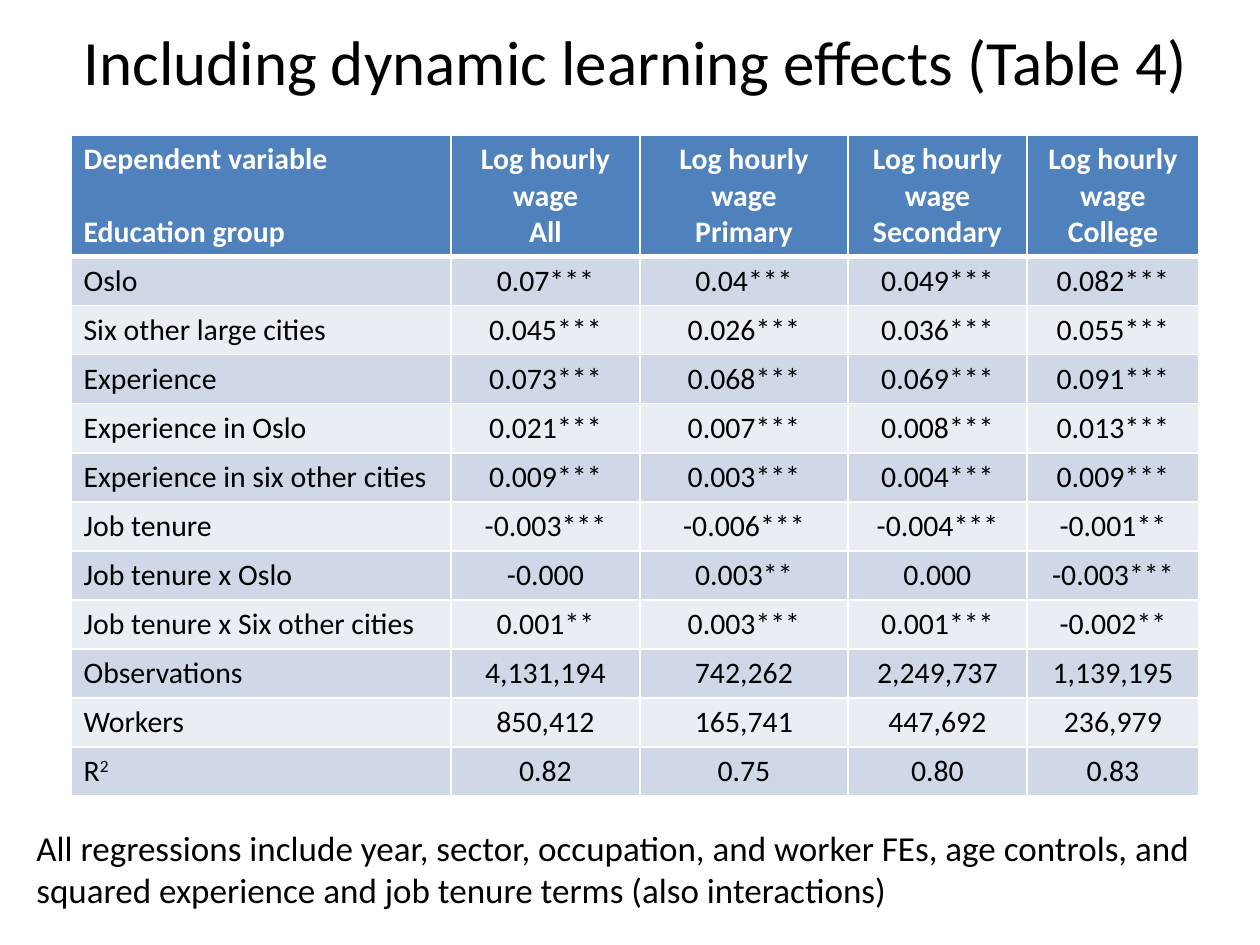
from lxml.etree import SubElement
from pptx import Presentation
from pptx.dml.color import RGBColor
from pptx.enum.text import MSO_AUTO_SIZE, PP_ALIGN as AL
from pptx.oxml.ns import qn
from pptx.util import Emu, Pt

BLACK = RGBColor(0x00, 0x00, 0x00)
WHITE = RGBColor(0xFF, 0xFF, 0xFF)
HEADER = RGBColor(0x4F, 0x81, 0xBD)
BANDS = (RGBColor(0xE9, 0xED, 0xF4), RGBColor(0xD0, 0xD8, 0xE8))

COLUMN_WIDTHS = (380, 189, 208, 179, 172)
HEADER_HEIGHT = 118
ROW_HEIGHT = 48
GROUPS = ("All", "Primary", "Secondary", "College")
RESULTS = (
    ("Oslo", "0.07***", "0.04***", "0.049***", "0.082***"),
    ("Six other large cities", "0.045***", "0.026***", "0.036***", "0.055***"),
    ("Experience", "0.073***", "0.068***", "0.069***", "0.091***"),
    ("Experience in Oslo", "0.021***", "0.007***", "0.008***", "0.013***"),
    ("Experience in six other cities", "0.009***", "0.003***", "0.004***", "0.009***"),
    ("Job tenure", "-0.003***", "-0.006***", "-0.004***", "-0.001**"),
    ("Job tenure x Oslo", "-0.000", "0.003**", "0.000", "-0.003***"),
    ("Job tenure x Six other cities", "0.001**", "0.003***", "0.001***", "-0.002**"),
    ("Observations", "4,131,194", "742,262", "2,249,737", "1,139,195"),
    ("Workers", "850,412", "165,741", "447,692", "236,979"),
    ("R", "0.82", "0.75", "0.80", "0.83"),
)


def px(n):
    return Emu(round(n * 914400 / 126))


class SlideBuilder:
    font = "Calibri"
    table_size = 17

    def __init__(self, slide):
        self.slide = slide

    def style(self, p, size, color=BLACK, bold=False, align=AL.LEFT):
        p.alignment = align
        p.font.name = self.font
        p.font.size = Pt(size)
        p.font.bold = bold
        p.font.color.rgb = color

    def text(self, x, y, w, h, text, size, align=AL.LEFT):
        sp = self.slide.shapes.add_textbox(px(x), px(y), px(w), px(h))
        tf = sp.text_frame
        tf.word_wrap = True
        tf.auto_size = MSO_AUTO_SIZE.SHAPE_TO_FIT_TEXT
        tf.text = text
        self.style(tf.paragraphs[0], size, align=align)

    def borders(self, cell, top, bottom):
        tc_pr = cell._tc.get_or_add_tcPr()
        for side, width in (("L", 1), ("R", 1), ("T", top), ("B", bottom)):
            ln = SubElement(tc_pr, qn(f"a:ln{side}"), w=str(Pt(width)))
            fill = SubElement(ln, qn("a:solidFill"))
            SubElement(fill, qn("a:srgbClr"), val=str(WHITE))

    def cell(self, cell, text, row, col):
        header = row == 0
        self.borders(cell, 3 if row == 1 else 1, 3 if header else 1)
        cell.fill.solid()
        cell.fill.fore_color.rgb = HEADER if header else BANDS[row % 2]
        cell.text = text
        for p in cell.text_frame.paragraphs:
            self.style(p, self.table_size, WHITE if header else BLACK, header,
                       AL.CENTER if col else AL.LEFT)

    def table(self, x, y, widths, header_height, row_height, rows):
        height = header_height + row_height * (len(rows) - 1)
        table = self.slide.shapes.add_table(
            len(rows), len(widths), px(x), px(y), px(sum(widths)), px(height)).table
        for column, width in zip(table.columns, widths):
            column.width = px(width)
        for i, values in enumerate(rows):
            table.rows[i].height = px(row_height if i else header_height)
            for j, value in enumerate(values):
                self.cell(table.cell(i, j), value, i, j)
        return table

    def superscript(self, p, text):
        r = p.add_run()
        r.text = text
        r._r.get_or_add_rPr().set("baseline", "30000")


def main():
    prs = Presentation()
    prs.slide_width, prs.slide_height = px(1260), px(945)
    s = SlideBuilder(prs.slides.add_slide(prs.slide_layouts[6]))

    header = ["Dependent variable\nEducation group"]
    header += [f"Log hourly wage\n{group}" for group in GROUPS]
    table = s.table(71, 135, COLUMN_WIDTHS, HEADER_HEIGHT, ROW_HEIGHT, [header, *RESULTS])
    table.cell(0, 0).text_frame.paragraphs[1].space_before = Pt(20.75)
    s.superscript(table.cell(len(RESULTS), 0).text_frame.paragraphs[0], "2")

    s.text(35, 16, 1201, 89, "Including dynamic learning effects (Table 4)", 36, AL.CENTER)
    s.text(24, 820, 1211, 97,
           "All regressions include year, sector, occupation, and worker FEs, age controls, "
           "and squared experience and job tenure terms (also interactions)", 20)
    prs.save("out.pptx")


if __name__ == "__main__":
    main()
